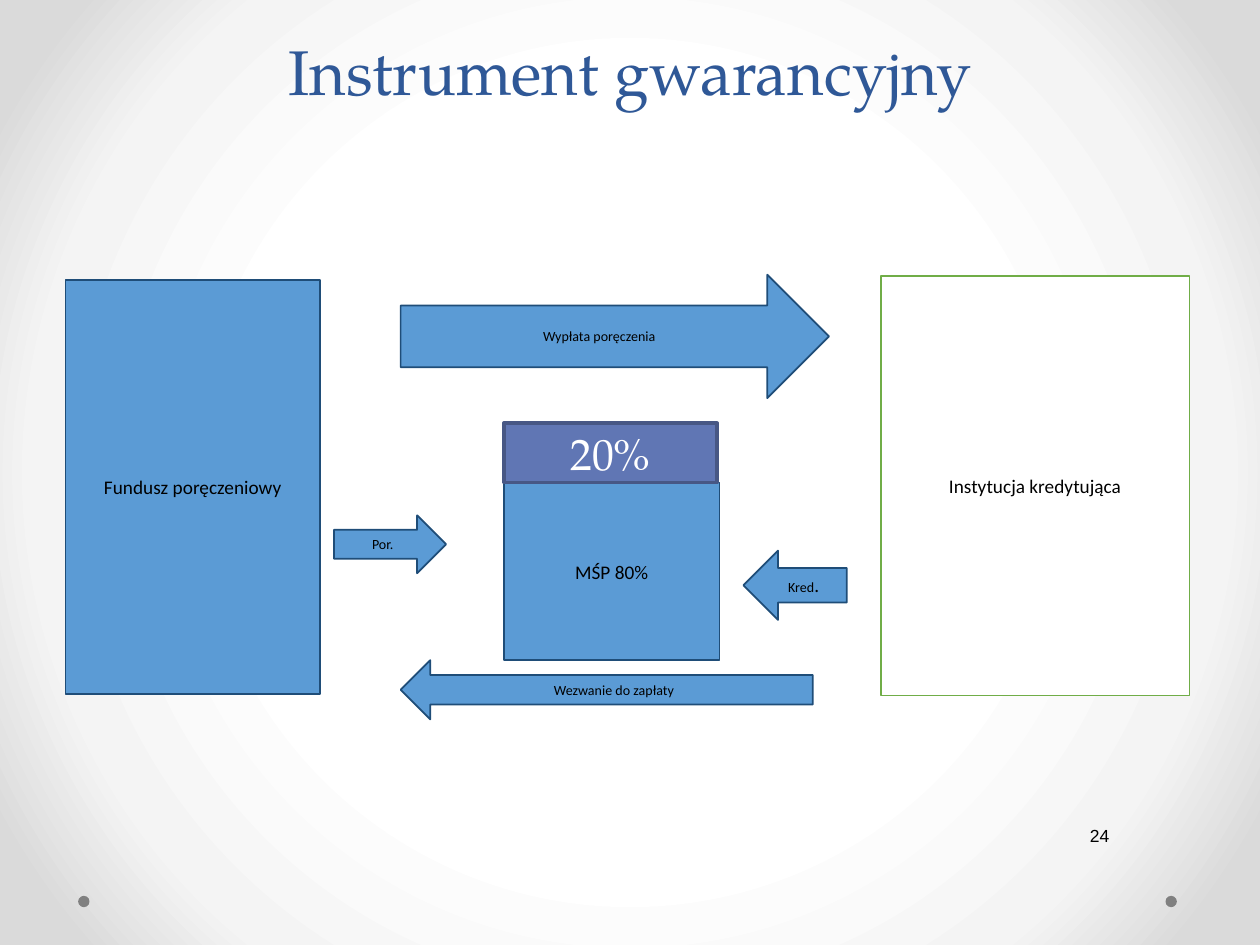
from dataclasses import dataclass

from lxml import etree
from pptx import Presentation
from pptx.dml.color import RGBColor
from pptx.enum.shapes import MSO_SHAPE as Shape
from pptx.enum.text import MSO_ANCHOR as Anchor, MSO_AUTO_SIZE as AutoSize, PP_ALIGN as Align
from pptx.oxml import parse_xml
from pptx.util import Inches, Pt


@dataclass(frozen=True)
class Theme:
    heading_font: str = "TeX Gyre Pagella"
    body_font: str = "Calibri"
    number_font: str = "Arial"
    title_color: str = "2F5897"
    text_color: str = "000000"
    light: str = "FFFFFF"
    blue: str = "5B9BD5"
    blue_line: str = "1F4D78"
    green_line: str = "70AD47"
    violet: str = "6076B4"
    violet_line: str = "475785"
    dot: str = "808080"
    backdrop: tuple = ((50, "FFFFFF"), (76, "F4F4F4"), (92, "DADADA"))
    title_size: float = 36
    title_spacing: float = 58
    share_size: float = 25
    label_size: float = 11
    number_size: float = 10
    flow_size: float = 8


THEME = Theme()


def rgb(value):
    return RGBColor.from_string(value)


def format_run(run, size, font=THEME.body_font, color=THEME.text_color):
    run.font.size = Pt(size)
    run.font.name = font
    run.font.color.rgb = rgb(color)


def add_box(slide, kind, box, fill=THEME.blue, line=THEME.blue_line, line_width=1):
    shape = slide.shapes.add_shape(kind, *(Inches(value) for value in box))
    shape.shadow.inherit = False
    shape.fill.solid()
    shape.fill.fore_color.rgb = rgb(fill)
    if line:
        shape.line.color.rgb = rgb(line)
        shape.line.width = Pt(line_width)
    else:
        shape.line.fill.background()
    return shape


def add_label(shape, text, size, **style):
    text_frame = shape.text_frame
    text_frame.word_wrap = True
    text_frame.vertical_anchor = Anchor.MIDDLE
    paragraph = text_frame.paragraphs[0]
    paragraph.text = text
    paragraph.alignment = Align.CENTER
    format_run(paragraph.runs[0], size, **style)
    return paragraph


# Radial background, light in the middle
def set_background(slide):
    slide.background.fill.solid()
    properties = slide.background._cSld.bg.bgPr
    namespace = "http://schemas.openxmlformats.org/drawingml/2006/main"
    stops = "".join(
        f'<a:gs pos="{position * 1000}"><a:srgbClr val="{color}"/></a:gs>'
        for position, color in THEME.backdrop)
    gradient = parse_xml(
        f'<a:gradFill xmlns:a="{namespace}" rotWithShape="1"><a:gsLst>{stops}</a:gsLst>'
        '<a:path path="circle"><a:fillToRect l="50000" t="50000" r="50000" b="50000"/>'
        '</a:path></a:gradFill>')
    properties.replace(properties.find(etree.QName(namespace, "solidFill")), gradient)


def add_title(slide, box):
    title = slide.shapes.title
    title.left, title.top, title.width, title.height = (Inches(value) for value in box)
    text_frame = title.text_frame
    text_frame.text = "Instrument gwarancyjny"
    text_frame.auto_size = AutoSize.NONE
    text_frame.vertical_anchor = Anchor.BOTTOM
    paragraph = text_frame.paragraphs[0]
    paragraph.alignment = Align.CENTER
    paragraph.line_spacing = Pt(THEME.title_spacing)
    format_run(paragraph.runs[0], THEME.title_size, THEME.heading_font, THEME.title_color)


# Guarantee fund on the left, lender on the right
def add_parties(slide, box):
    left, top, width, height = box
    fund = add_box(slide, Shape.RECTANGLE, (left, top + 0.03, 2.02, height - 0.04))
    add_label(fund, "Fundusz poręczeniowy", THEME.label_size)
    lender = add_box(slide, Shape.RECTANGLE, (left + width - 2.45, top, 2.45, height),
                     THEME.light, THEME.green_line)
    add_label(lender, "Instytucja kredytująca", THEME.label_size)


# Enterprise block: guaranteed share below, own share on top
def add_enterprise(slide, box):
    left, top, width, height = box
    share_height = 0.47
    guaranteed = add_box(slide, Shape.RECTANGLE,
                         (left, top + share_height, width, height - share_height))
    add_label(guaranteed, "MŚP 80%", THEME.label_size)
    own = add_box(slide, Shape.RECTANGLE, (left, top, width - 0.02, share_height),
                  THEME.violet, THEME.violet_line, 2.25)
    add_label(own, "20%", THEME.share_size, font=THEME.heading_font, color=THEME.light)


# Arrows between the parties
def add_flows(slide, box):
    left, top, _, _ = box
    flows = (
        ("Wypłata poręczenia", Shape.RIGHT_ARROW, 0.53, 0, 3.4, 0.98),
        ("Por.", Shape.RIGHT_ARROW, 0, 1.91, 0.89, 0.46),
        ("Kred", Shape.LEFT_ARROW, 3.25, 2.19, 0.82, 0.55),
        ("Wezwanie do zapłaty", Shape.LEFT_ARROW, 0.53, 3.06, 3.27, 0.47),
    )
    for text, kind, x, y, width, height in flows:
        arrow = add_box(slide, kind, (left + x, top + y, width, height))
        paragraph = add_label(arrow, text, THEME.flow_size)
        if text == "Kred":
            period = paragraph.add_run()
            period.text = "."
            format_run(period, THEME.label_size)


# Two corner dots and the page number
def add_footer(slide, box):
    left, top, width, _ = box
    dot = 0.09
    for x in (left, left + width - dot):
        add_box(slide, Shape.OVAL, (x, top + 0.68, dot, dot), THEME.dot, None)
    number = slide.shapes.add_textbox(Inches(left + 8), Inches(top), Inches(0.63), Inches(0.4))
    paragraph = add_label(number, "24", THEME.number_size, font=THEME.number_font)
    paragraph.alignment = Align.LEFT
    number.text_frame.margin_left = Inches(0.03)
    number.text_frame.margin_right = Inches(0.05)


def main():
    presentation = Presentation()
    presentation.slide_width, presentation.slide_height = Inches(10), Inches(7.5)
    slide = presentation.slides.add_slide(presentation.slide_layouts[5])
    set_background(slide)
    add_title(slide, (0.75, 0.52, 8.5, 0.39))
    add_footer(slide, (0.62, 6.43, 8.72, 0.77))
    add_parties(slide, (0.52, 2.19, 8.92, 3.33))
    add_enterprise(slide, (4, 3.36, 1.71, 1.88))
    add_flows(slide, (2.65, 2.18, 4.07, 3.53))
    presentation.save("out.pptx")


if __name__ == "__main__":
    main()
